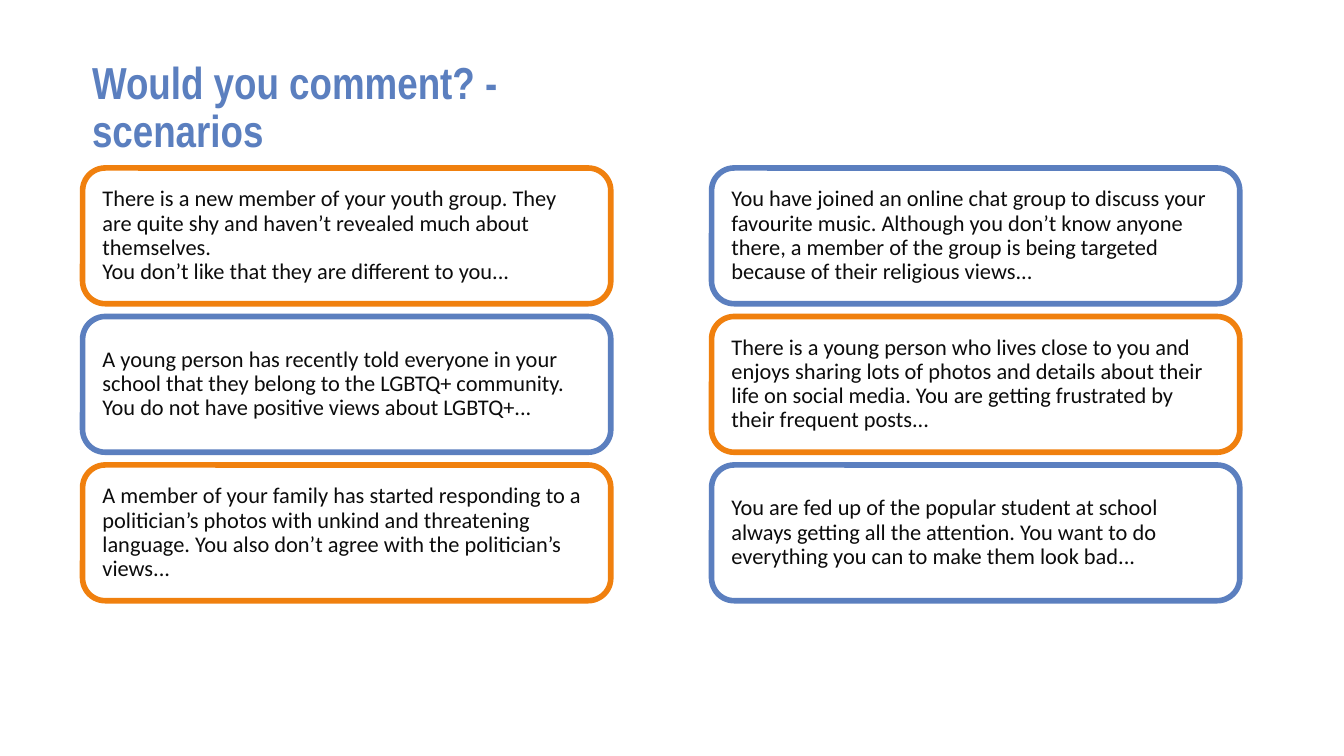
from dataclasses import dataclass

from pptx import Presentation
from pptx.dml.color import RGBColor
from pptx.enum.shapes import MSO_SHAPE
from pptx.enum.text import MSO_ANCHOR, PP_ALIGN
from pptx.slide import Slide
from pptx.text.text import TextFrame
from pptx.util import Emu, Pt

EMU_PER_PX = 4572  # 200 px to the inch


@dataclass(frozen=True)
class Theme:
    blue: RGBColor = RGBColor(0x5B, 0x7F, 0xBF)
    orange: RGBColor = RGBColor(0xF0, 0x80, 0x0E)
    ink: RGBColor = RGBColor(0x0C, 0x0C, 0x0C)
    title_font: str = "Arial Narrow"
    body_font: str = "Calibri"
    title_size: Pt = Pt(24)
    body_size: Pt = Pt(12)
    border: Pt = Pt(3)
    line_spacing: float = 0.9


@dataclass(frozen=True)
class Scenario:
    column: int
    row: int
    paragraphs: tuple[str, ...]


THEME = Theme()

SLIDE_WIDTH, SLIDE_HEIGHT = 2000, 1125

# Card grid
LEFT, TOP = 123, 250
CARD_WIDTH, CARD_HEIGHT = 786, 202
COLUMN_STEP, ROW_STEP = 936, 221

SCENARIOS = (
    Scenario(0, 0, (
        "There is a new member of your youth group. They are quite shy and "
        "haven’t revealed much about themselves.",
        "You don’t like that they are different to you...",
    )),
    Scenario(0, 1, (
        "A young person has recently told everyone in your school that they "
        "belong to the LGBTQ+ community. You do not have positive views about "
        "LGBTQ+...",
    )),
    Scenario(0, 2, (
        "A member of your family has started responding to a politician’s "
        "photos with unkind and threatening language. You also don’t agree "
        "with the politician’s views...",
    )),
    Scenario(1, 0, (
        "You have joined an online chat group to discuss your favourite music. "
        "Although you don’t know anyone there, a member of the group is being "
        "targeted because of their religious views...",
    )),
    Scenario(1, 1, (
        "There is a young person who lives close to you and enjoys sharing "
        "lots of photos and details about their life on social media. You are "
        "getting frustrated by their frequent posts...",
    )),
    Scenario(1, 2, (
        "You are fed up of the popular student at school always getting all "
        "the attention. You want to do everything you can to make them look "
        "bad...",
    )),
)


def px(length: int) -> Emu:
    return Emu(length * EMU_PER_PX)


def write(frame: TextFrame, paragraphs: tuple[str, ...], inset_x: int,
          inset_y: int, font: str, size: Pt, color: RGBColor,
          bold: bool = False) -> None:
    frame.word_wrap = True
    frame.vertical_anchor = MSO_ANCHOR.MIDDLE
    frame.margin_left = frame.margin_right = px(inset_x)
    frame.margin_top = frame.margin_bottom = px(inset_y)
    frame.text = "\n".join(paragraphs)
    for paragraph in frame.paragraphs:
        paragraph.alignment = PP_ALIGN.LEFT
        paragraph.line_spacing = THEME.line_spacing
        paragraph.font.name = font
        paragraph.font.size = size
        paragraph.font.bold = bold
        paragraph.font.color.rgb = color


def draw_title(slide: Slide, title: str) -> None:
    heading = slide.shapes.add_textbox(px(LEFT), px(74), px(814), px(176))
    write(heading.text_frame, (title,), 14, 8, THEME.title_font,
          THEME.title_size, THEME.blue, bold=True)


def draw_scenario(slide: Slide, scenario: Scenario) -> None:
    card = slide.shapes.add_shape(
        MSO_SHAPE.ROUNDED_RECTANGLE,
        px(LEFT + scenario.column * COLUMN_STEP),
        px(TOP + scenario.row * ROW_STEP),
        px(CARD_WIDTH), px(CARD_HEIGHT),
    )
    card.shadow.inherit = False
    card.fill.background()
    # Border colours alternate like a chessboard
    is_blue = (scenario.column + scenario.row) % 2
    card.line.color.rgb = THEME.blue if is_blue else THEME.orange
    card.line.width = THEME.border
    write(card.text_frame, scenario.paragraphs, 20, 20, THEME.body_font,
          THEME.body_size, THEME.ink)


def main() -> None:
    deck = Presentation()
    deck.slide_width, deck.slide_height = px(SLIDE_WIDTH), px(SLIDE_HEIGHT)
    slide = deck.slides.add_slide(deck.slide_layouts[6])

    draw_title(slide, "Would you comment? - scenarios")
    for scenario in SCENARIOS:
        draw_scenario(slide, scenario)

    deck.save("out.pptx")


if __name__ == "__main__":
    main()
